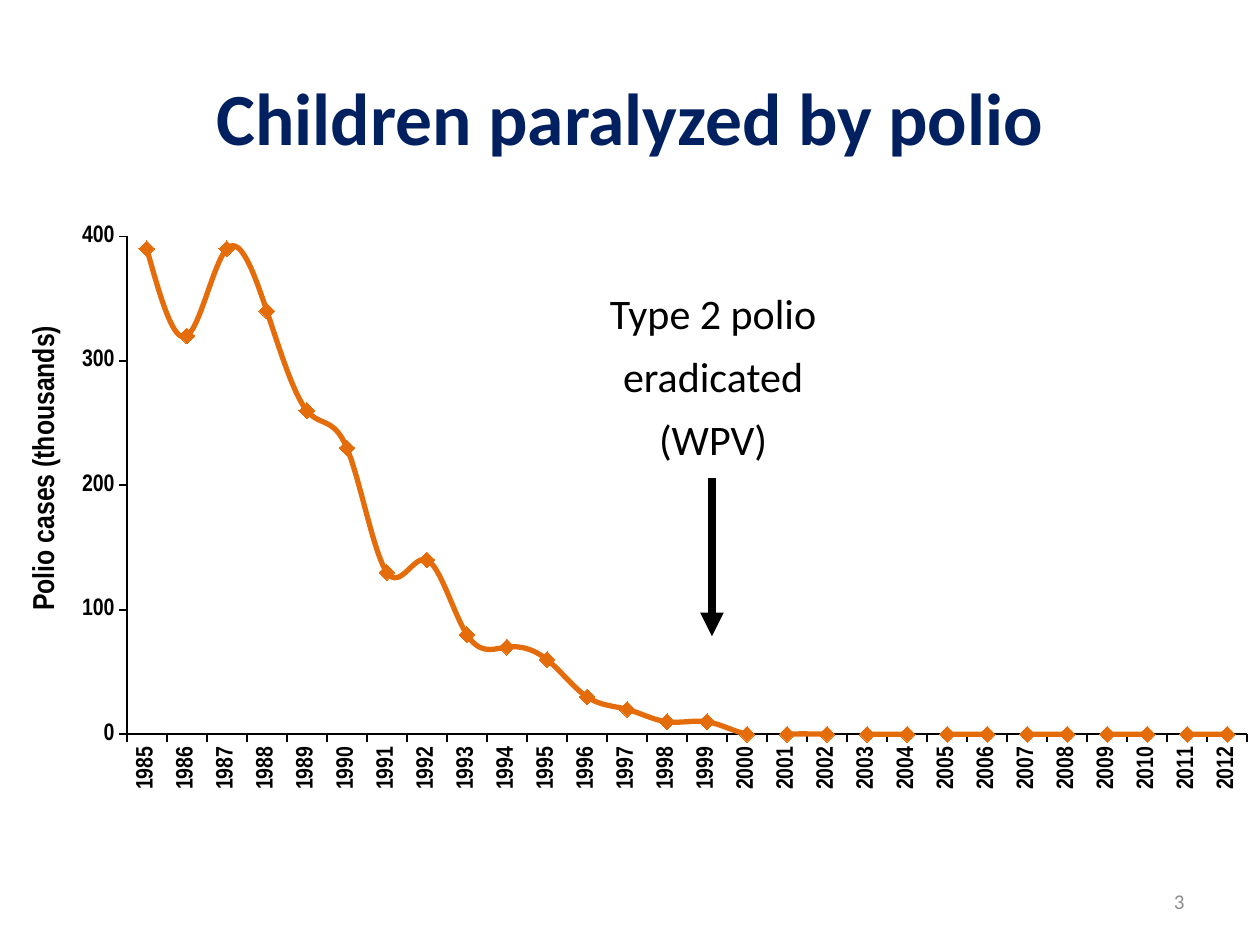
from lxml import etree
from pptx import Presentation
from pptx.chart.data import CategoryChartData
from pptx.dml.color import RGBColor
from pptx.enum.chart import XL_CHART_TYPE, XL_MARKER_STYLE, XL_TICK_MARK
from pptx.enum.shapes import MSO_CONNECTOR
from pptx.enum.text import MSO_ANCHOR, PP_ALIGN
from pptx.oxml import parse_xml
from pptx.oxml.ns import nsdecls, qn
from pptx.util import Inches, Pt

LINE_MARKERS = XL_CHART_TYPE.LINE_MARKERS
DIAMOND = XL_MARKER_STYLE.DIAMOND
OUTSIDE, NO_TICK = XL_TICK_MARK.OUTSIDE, XL_TICK_MARK.NONE
STRAIGHT = MSO_CONNECTOR.STRAIGHT
TOP, MIDDLE = MSO_ANCHOR.TOP, MSO_ANCHOR.MIDDLE
CENTER, RIGHT = PP_ALIGN.CENTER, PP_ALIGN.RIGHT

BLACK, NAVY, GRAY, ORANGE = "000000", "002060", "8C8C8C", "E46C0A"
YEARS = [str(year) for year in range(1985, 2013)]
CASES = [390, 320, 390, 340, 260, 230, 130, 140, 80, 70, 60, 30, 20, 10, 10]
CASES += [0] * (len(YEARS) - len(CASES))
PLOT_AREA = {"x": 0.097, "y": 0.062, "w": 0.893, "h": 0.8}
AXIS_TITLE_SPOT = {"x": 0.014, "y": 0.197}


def rgb(value):
    return RGBColor.from_string(value)


def apply(target, formats):
    for name, value in formats.items():
        setattr(target, name, value)


def manual_layout(shares, target=""):
    modes = "".join(f'<c:{side}Mode val="edge"/>' for side in "xy")
    sizes = "".join(f'<c:{side} val="{share}"/>' for side, share in shares.items())
    return parse_xml(f'<c:layout {nsdecls("c")}><c:manualLayout>{target}{modes}{sizes}'
                     '</c:manualLayout></c:layout>')


class SlideBuilder:
    body_font = "Calibri"
    chart_font = "Arial Narrow"

    def __init__(self, slide):
        self.slide = slide

    def style_font(self, font, size, color, name, bold=False):
        apply(font, {"size": Pt(size), "name": name, "bold": bold})
        font.color.rgb = rgb(color)

    def text(self, box, wording, size, color, align=CENTER, anchor=MIDDLE,
             bold=False, spacing=1.0):
        frame = self.slide.shapes.add_textbox(*map(Inches, box)).text_frame
        apply(frame, {"word_wrap": True, "vertical_anchor": anchor})
        paragraph = frame.paragraphs[0]
        apply(paragraph, {"text": wording, "alignment": align, "line_spacing": spacing})
        self.style_font(paragraph.runs[0].font, size, color, self.body_font, bold)

    def arrow(self, tip, start, color, width):
        arrow = self.slide.shapes.add_connector(
            STRAIGHT, *map(Inches, tip), *map(Inches, start))
        arrow.line.width = Pt(width)
        arrow.line.color.rgb = rgb(color)
        outline = arrow.line._get_or_add_ln()
        etree.SubElement(outline, qn("a:headEnd"), type="triangle")
        etree.SubElement(arrow._element.spPr, qn("a:effectLst"))

    def axis(self, axis):
        apply(axis, {"major_tick_mark": OUTSIDE, "minor_tick_mark": NO_TICK,
                     "has_major_gridlines": False})
        self.style_font(axis.tick_labels.font, 13.6, BLACK, self.chart_font, True)
        axis.format.line.width = Pt(1)
        axis.format.line.color.rgb = rgb(BLACK)

    def axis_title(self, axis, wording):
        paragraph = axis.axis_title.text_frame.paragraphs[0]
        paragraph.text = wording
        self.style_font(paragraph.runs[0].font, 17.3, BLACK, self.chart_font, True)
        title = axis.axis_title._element
        for existing in title.findall(qn("c:layout")):
            title.remove(existing)
        title.find(qn("c:tx")).addnext(manual_layout(AXIS_TITLE_SPOT))

    def line_chart(self, box, categories, values, axis_title, color):
        data = CategoryChartData(number_format="0")
        data.categories = categories
        data.add_series("Series 1", values)
        chart = self.slide.shapes.add_chart(
            LINE_MARKERS, *map(Inches, box), data).chart
        apply(chart, {"has_legend": False, "has_title": False})
        self.style_font(chart.font, 17.3, BLACK, "Arial", True)

        years, cases = chart.category_axis, chart.value_axis
        self.axis(years)
        self.axis(cases)
        years._element.find(qn("c:txPr")).find(qn("a:bodyPr")).set("rot", "-5400000")
        apply(cases, {"minimum_scale": 0, "maximum_scale": 400, "major_unit": 100})
        apply(cases.tick_labels, {"number_format": "0", "number_format_is_linked": False})
        self.axis_title(cases, axis_title)

        chart.plots[0].vary_by_categories = False
        series = chart.plots[0].series[0]
        series.smooth = True
        series.format.line.width = Pt(3)
        series.format.line.color.rgb = rgb(color)
        apply(series.marker, {"style": DIAMOND, "size": 9})
        series.marker.format.fill.solid()
        series.marker.format.fill.fore_color.rgb = rgb(color)
        series.marker.format.line.color.rgb = rgb(color)

        plot_area = chart._chartSpace.chart.plotArea
        for existing in plot_area.findall(qn("c:layout")):
            plot_area.remove(existing)
        plot_area.insert(0, manual_layout(PLOT_AREA, '<c:layoutTarget val="inner"/>'))


def main():
    deck = Presentation()
    apply(deck, {"slide_width": Inches(10), "slide_height": Inches(7.5)})
    builder = SlideBuilder(deck.slides.add_slide(deck.slide_layouts[6]))
    builder.text((0.5, 0.3, 9, 1.25), "Children paralyzed by polio", 42, NAVY, bold=True)
    builder.text((7.17, 6.95, 2.33, 0.4), "3", 12, GRAY, align=RIGHT)
    builder.line_chart((0.04, 1.57, 9.96, 4.94), YEARS, CASES,
                       "Polio cases (thousands)", ORANGE)
    builder.arrow((5.65, 5.05), (5.65, 3.79), BLACK, 4.5)
    builder.text((4.53, 2.13, 2.26, 1.58), "Type 2 polio eradicated (WPV)", 24, BLACK,
                 anchor=TOP, spacing=1.25)
    deck.save("out.pptx")


if __name__ == "__main__":
    main()
